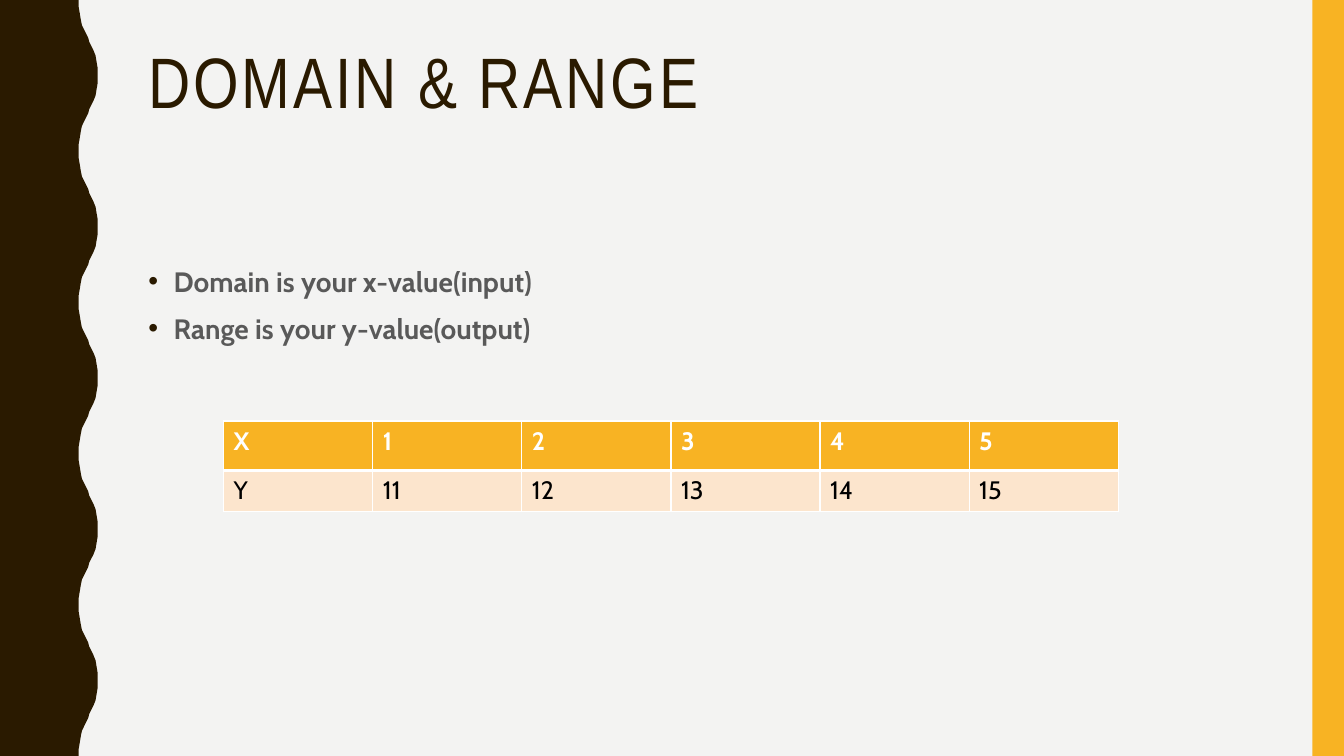
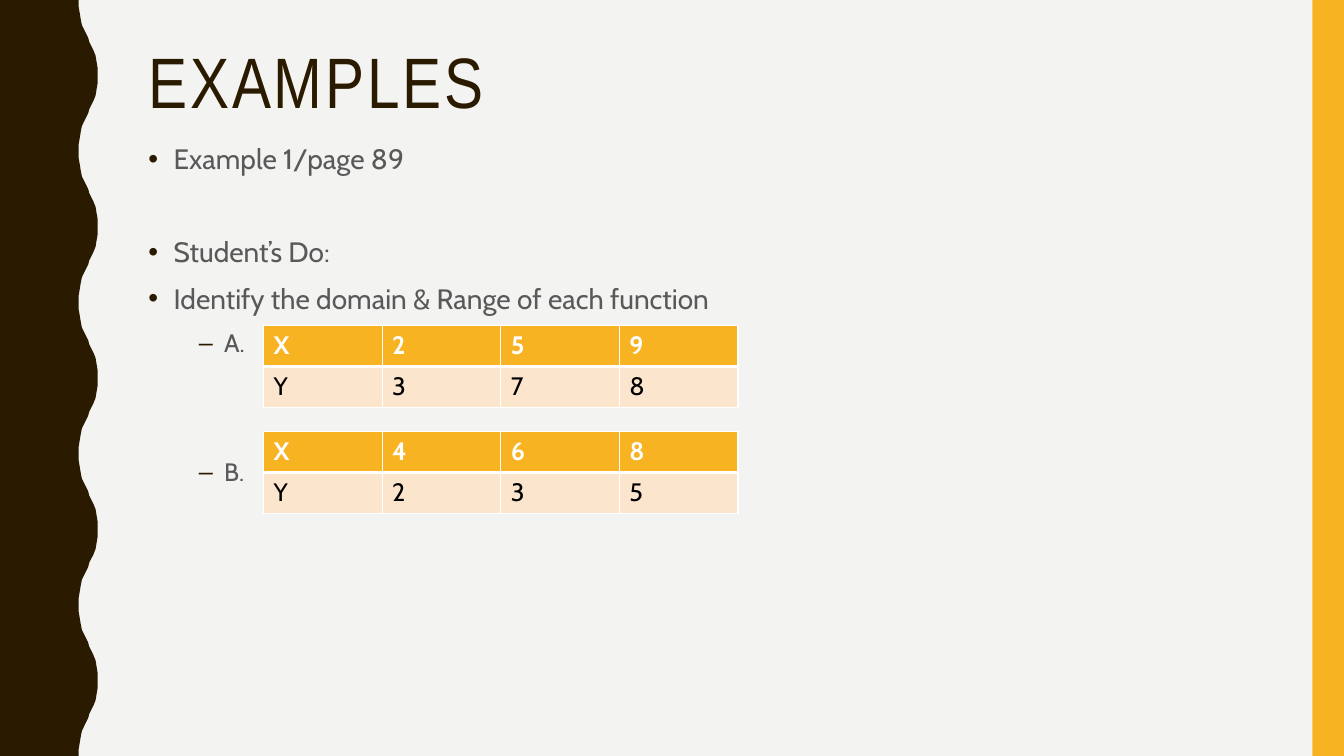
import lxml.etree
import pptx
import pptx.dml.color
import pptx.enum.shapes
import pptx.oxml.ns
import pptx.util

SCALE = 9525
WIDTH, HEIGHT = 1280, 720
WAVE_PERIOD = 144
HALF_WAVE = [(75, 0), (75, 7), (76, 13), (77, 19), (78, 24), (80, 28), (82, 32), (84, 36),
             (85, 40), (87, 44), (89, 48), (91, 53), (92, 59), (93, 65), (93, 72)]


def px(length):
    """Turn pixels into EMU."""
    return pptx.util.Emu(length * SCALE)


def color(value):
    """Turn a hex string into a colour."""
    return pptx.dml.color.RGBColor.from_string(value)


def add_xml(parent, tag, **attributes):
    """Append a drawing element with its attributes."""
    return lxml.etree.SubElement(parent, pptx.oxml.ns.qn(tag), attributes)


def write_text(paragraph, text, font, size, fill, bold=False, tracking=0,
               line_spacing=1.0, space_before=0):
    """Write one formatted run and set the spacing of its paragraph."""
    paragraph.line_spacing = line_spacing
    paragraph.space_before = pptx.util.Pt(space_before)
    run = paragraph.add_run()
    run.text = text
    run.font.name = font
    run.font.size = pptx.util.Pt(size)
    run.font.bold = bold
    run.font.color.rgb = color(fill)
    if tracking:
        run.font._element.set("spc", str(tracking * 100))


class Deck:
    """Hold the style and the current slide."""

    DARK, GOLD, PEACH, PAPER = "2A1A00", "F8B323", "FCE5CD", "F3F3F2"
    GREY, WHITE, BLACK = "595959", "FFFFFF", "000000"
    TITLE_FONT, BODY_FONT = "Arial Narrow", "Cabin"
    LEFT, TEXT_WIDTH = 132, 1068
    LEVELS = [("•", 24, 20), ("–", 72, 18)]

    def __init__(self):
        """Start an empty presentation."""
        self.presentation = pptx.Presentation()
        self.presentation.slide_width = px(WIDTH)
        self.presentation.slide_height = px(HEIGHT)
        self.slide = None

    def add_slide(self, title):
        """Add a slide with its background, side bands and title."""
        self.slide = self.presentation.slides.add_slide(self.presentation.slide_layouts[6])
        background = self.slide.background.fill
        background.solid()
        background.fore_color.rgb = color(self.PAPER)
        self.add_wave()
        band = self.slide.shapes.add_shape(
            pptx.enum.shapes.MSO_SHAPE.RECTANGLE, px(1250), 0, px(30), px(HEIGHT))
        self.paint(band, self.GOLD)
        frame = self.add_text_frame(40, 156)
        write_text(frame.paragraphs[0], title, self.TITLE_FONT, 51, self.DARK,
                   tracking=2, line_spacing=0.9)

    def paint(self, shape, fill):
        """Give a shape a flat fill without line or shadow."""
        shape.shadow.inherit = False
        shape.fill.solid()
        shape.fill.fore_color.rgb = color(fill)
        shape.line.fill.background()

    def add_wave(self):
        """Draw the left band with its wavy edge."""
        period = HALF_WAVE + [(x, WAVE_PERIOD - y) for x, y in HALF_WAVE[-2::-1]]
        edge = [(x, y + top) for top in range(0, HEIGHT, WAVE_PERIOD) for x, y in period]
        builder = self.slide.shapes.build_freeform(0, 0, SCALE)
        builder.add_line_segments(edge + [(0, HEIGHT)], close=True)
        self.paint(builder.convert_to_shape(), self.DARK)

    def add_text_frame(self, top, height):
        """Add a wrapping text box in the content column."""
        box = self.slide.shapes.add_textbox(
            px(self.LEFT), px(top), px(self.TEXT_WIDTH), px(height))
        box.text_frame.word_wrap = True
        return box.text_frame

    def add_bullets(self, top, height, items, bold=False):
        """Add bullets given as text, level and space before."""
        frame = self.add_text_frame(top, height)
        for index, (text, level, space_before) in enumerate(items):
            paragraph = frame.add_paragraph() if index else frame.paragraphs[0]
            character, indent, size = self.LEVELS[level]
            write_text(paragraph, text, self.BODY_FONT, size, self.GREY, bold=bold,
                       line_spacing=1.1, space_before=space_before)
            paragraph.level = level
            properties = paragraph._p.get_or_add_pPr()
            properties.set("marL", str(px(indent)))
            properties.set("indent", str(px(-24)))
            add_xml(add_xml(properties, "a:buClr"), "a:srgbClr", val=self.DARK)
            add_xml(properties, "a:buFont", typeface="Arial")
            add_xml(properties, "a:buChar", char=character)

    def add_table(self, left, top, column_width, row_heights, rows):
        """Add a table with a gold first row and a peach second row."""
        columns = len(rows[0])
        table = self.slide.shapes.add_table(
            len(rows), columns, px(left), px(top),
            px(column_width * columns), px(sum(row_heights))).table
        table.first_row = table.horz_banding = False
        for column in table.columns:
            column.width = px(column_width)
        styles = [(self.GOLD, self.WHITE, True, 1, 3), (self.PEACH, self.BLACK, False, 3, 1)]
        for row_index, (values, style) in enumerate(zip(rows, styles)):
            fill, text_fill, bold, top_line, bottom_line = style
            table.rows[row_index].height = px(row_heights[row_index])
            for column_index, value in enumerate(values):
                cell = table.cell(row_index, column_index)
                self.add_borders(cell, L=1, R=1, T=top_line, B=bottom_line)
                cell.fill.solid()
                cell.fill.fore_color.rgb = color(fill)
                write_text(cell.text_frame.paragraphs[0], value, self.BODY_FONT, 18,
                           text_fill, bold=bold)

    def add_borders(self, cell, **widths):
        """Draw white cell borders with widths in points."""
        properties = cell._tc.get_or_add_tcPr()
        for side, width in widths.items():
            line = add_xml(properties, "a:ln" + side, w=str(pptx.util.Pt(width)))
            add_xml(add_xml(line, "a:solidFill"), "a:srgbClr", val=self.WHITE)


def main():
    """Build and save both slides."""
    deck = Deck()
    deck.add_slide("DOMAIN & RANGE")
    deck.add_bullets(244, 377, [("Domain is your x-value(input)", 0, 7),
                                ("Range is your y-value(output)", 0, 7)], bold=True)
    deck.add_table(213, 401, 142, [47, 39], [["X", "1", "2", "3", "4", "5"],
                                             ["Y", "11", "12", "13", "14", "15"]])

    deck.add_slide("EXAMPLES")
    deck.add_bullets(127, 491, [("Example 1/page 89", 0, 7),
                                ("Student’s Do:", 0, 40),
                                ("Identify the domain & Range of each function", 0, 7),
                                ("A.", 1, 7),
                                ("B.", 1, 68)])
    examples = [(310, [["X", "2", "5", "9"], ["Y", "3", "7", "8"]]),
                (411, [["X", "4", "6", "8"], ["Y", "2", "3", "5"]])]
    for top, rows in examples:
        deck.add_table(251, top, 113, [39, 39], rows)
    deck.presentation.save("out.pptx")


if __name__ == "__main__":
    main()
